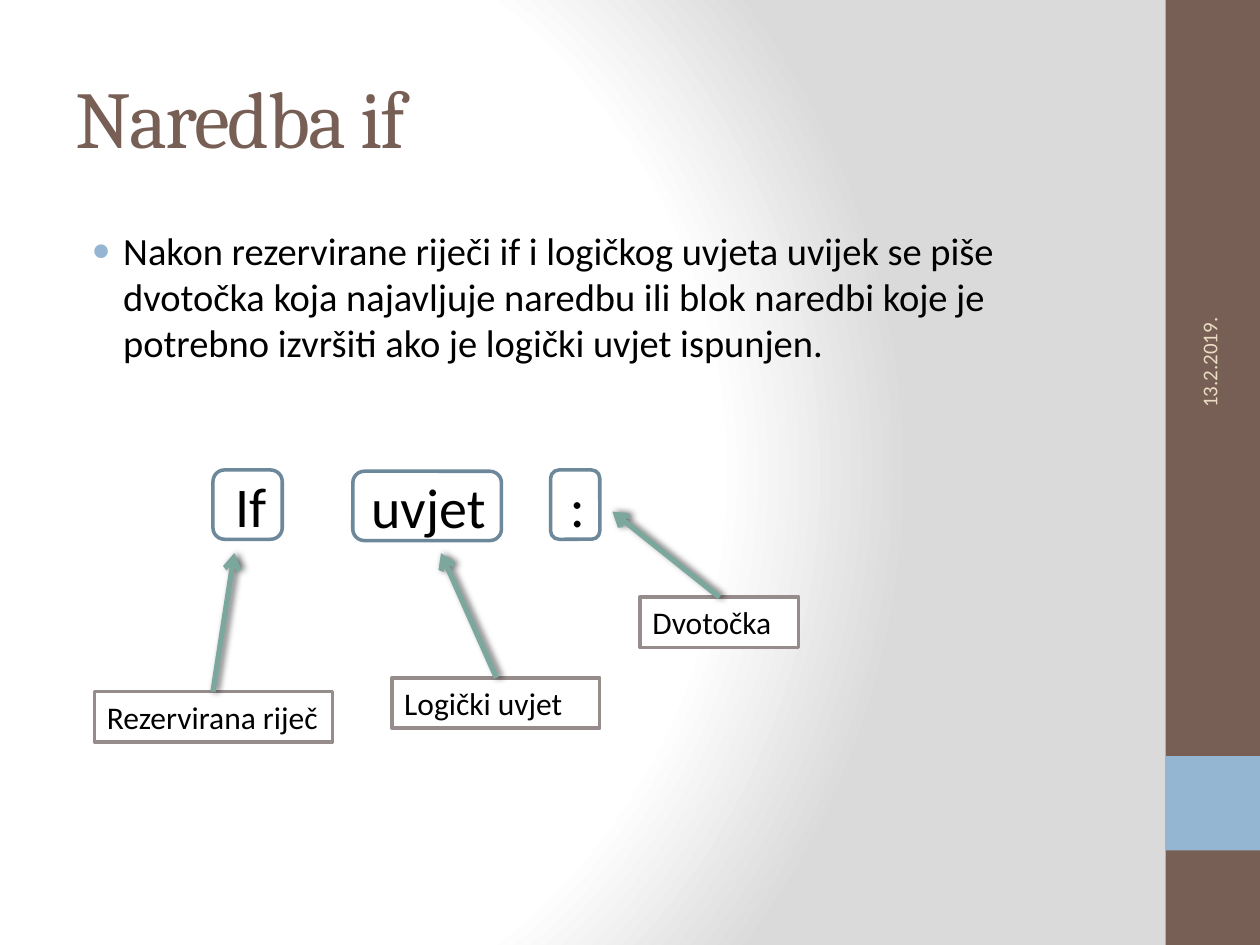
from pptx import Presentation
from pptx.dml.color import RGBColor
from pptx.enum.shapes import MSO_CONNECTOR as CONN, MSO_SHAPE as SHAPE
from pptx.enum.text import MSO_ANCHOR as ANCHOR, MSO_AUTO_SIZE as AUTO, PP_ALIGN as ALIGN
from pptx.oxml import parse_xml
from pptx.oxml.ns import nsdecls, qn
from pptx.util import Inches, Pt

BROWN = RGBColor(0x77, 0x5F, 0x55)
BLUE = RGBColor(0x94, 0xB6, 0xD2)
SAND = RGBColor(0xEB, 0xDD, 0xC3)
SLATE = RGBColor(0x6D, 0x87, 0x9B)
GREY = RGBColor(0x96, 0x8C, 0x8C)
GREEN = RGBColor(0x7B, 0xA7, 0x9D)
SILVER = RGBColor(0xDA, 0xDA, 0xDA)
WHITE = RGBColor(0xFF, 0xFF, 0xFF)
BLACK = RGBColor(0, 0, 0)

NS = nsdecls("a")

TOKENS = [  # text, left, top, width
    ("If", 1.69, 3.73, 0.55),
    ("uvjet", 2.8, 3.74, 1.18),
    (":", 4.37, 3.73, 0.39),
]
LABELS = [  # text, left, top, width, arrow start x, arrow tip
    ("Rezervirana riječ", 0.75, 5.49, 1.89, 1.69, (1.86, 4.39)),
    ("Logički uvjet", 3.11, 5.38, 1.65, 3.94, (3.5, 4.39)),
    ("Dvotočka", 5.08, 4.74, 1.26, 5.71, (4.86, 4.06)),
]


class SlideBuilder:
    font = "Calibri"
    title_font = "Cambria"

    def __init__(self, prs):
        self.s = prs.slides.add_slide(prs.slide_layouts[6])

    def background(self, stops, focus):
        """Radial gradient; stops are (percent, colour), focus is l, t, r, b in percent."""
        self.s.background.fill.solid()
        bg = self.s._element.find(".//" + qn("p:bgPr"))
        gs = "".join(f'<a:gs pos="{pos * 1000}"><a:srgbClr val="{color}"/></a:gs>'
                     for pos, color in stops)
        rect = " ".join(f'{side}="{v * 1000}"' for side, v in zip("ltrb", focus))
        bg.replace(bg[0], parse_xml(
            f'<a:gradFill {NS} rotWithShape="1"><a:gsLst>{gs}</a:gsLst>'
            f'<a:path path="circle"><a:fillToRect {rect}/></a:path></a:gradFill>'))

    def set_text(self, sp, text, size, color=BLACK, align=ALIGN.LEFT, anchor=ANCHOR.TOP, **font):
        tf = sp.text_frame
        tf.word_wrap = True
        tf.vertical_anchor = anchor
        p = tf.paragraphs[0]
        p.alignment = align
        r = p.add_run()
        r.text = text
        r.font.color.rgb = color
        for key, value in {"name": self.font, "size": Pt(size), **font}.items():
            setattr(r.font, key, value)
        return p, r

    def text(self, box, text, size, **style):
        sp = self.s.shapes.add_textbox(*map(Inches, box))
        return (sp, *self.set_text(sp, text, size, **style))

    def shape(self, kind, box, fill=None, line=None):
        sp = self.s.shapes.add_shape(kind, *map(Inches, box))
        sp.shadow.inherit = False
        if fill is None:
            sp.fill.background()
        else:
            sp.fill.solid()
            sp.fill.fore_color.rgb = fill
        if line is None:
            sp.line.fill.background()
        else:
            sp.line.color.rgb = line
            sp.line.width = Pt(2)
        return sp

    def title(self, box, text):
        _, _, r = self.text(box, text, 46, color=BROWN, anchor=ANCHOR.MIDDLE,
                            name=self.title_font)
        r._r.get_or_add_rPr().set("spc", "-100")

    def bullet(self, box, text):
        _, p, _ = self.text(box, text, 22)
        p.space_before = Pt(4.4)
        pPr = p._p.get_or_add_pPr()
        pPr.set("marL", str(Inches(0.38)))
        pPr.set("indent", str(Inches(-0.25)))
        for xml in (f'<a:buClr {NS}><a:srgbClr val="{BLUE}"/></a:buClr>',
                    f'<a:buFont {NS} typeface="{self.font}"/>',
                    f'<a:buChar {NS} char="•"/>'):
            pPr.append(parse_xml(xml))

    def token(self, text, *box):
        sp = self.shape(SHAPE.ROUNDED_RECTANGLE, box, line=SLATE)
        self.set_text(sp, text, 32, align=ALIGN.RIGHT, anchor=ANCHOR.MIDDLE)

    def label(self, text, *box):
        sp = self.shape(SHAPE.RECTANGLE, box, WHITE, GREY)
        self.set_text(sp, text, 18)
        sp.text_frame.auto_size = AUTO.SHAPE_TO_FIT_TEXT

    def arrow(self, start, end):
        c = self.s.shapes.add_connector(CONN.STRAIGHT, *map(Inches, start + end))
        c.line.color.rgb = GREEN
        c.line.width = Pt(3)
        c.line._get_or_add_ln().append(parse_xml(f'<a:tailEnd {NS} type="arrow"/>'))
        c._element.spPr.append(parse_xml(
            f'<a:effectLst {NS}><a:outerShdw blurRad="{Pt(4)}" dist="{Pt(2)}" dir="0" '
            f'rotWithShape="0"><a:srgbClr val="{BLACK}"><a:alpha val="60000"/></a:srgbClr>'
            '</a:outerShdw></a:effectLst>'))


def main():
    prs = Presentation()
    prs.slide_width, prs.slide_height = Inches(10), Inches(7.5)
    b = SlideBuilder(prs)

    b.background([(0, WHITE), (75, WHITE), (100, SILVER)], (20, 50, 100, 50))
    b.shape(SHAPE.RECTANGLE, (9.25, 0, 0.75, 7.5), BROWN)
    b.shape(SHAPE.RECTANGLE, (9.25, 6, 0.75, 0.75), BLUE)

    b.title((0.5, 0.3, 8.33, 1.25), "Naredba if")
    b.bullet((0.5, 1.75, 8.33, 5.25),
             "Nakon rezervirane riječi if i logičkog uvjeta uvijek se piše dvotočka koja "
             "najavljuje naredbu ili blok naredbi koje je potrebno izvršiti ako je logički "
             "uvjet ispunjen.")
    date, _, _ = b.text((8.26, 1.8, 2.67, 0.4), "13.2.2019.", 12, color=SAND,
                        anchor=ANCHOR.MIDDLE)
    date.rotation = 270

    for text, left, top, width in TOKENS:
        b.token(text, left, top, width, 0.55)
    for text, left, top, width, start_x, tip in LABELS:
        b.label(text, left, top, width, 0.4)
        b.arrow((start_x, top), tip)

    prs.save("out.pptx")


if __name__ == "__main__":
    main()
